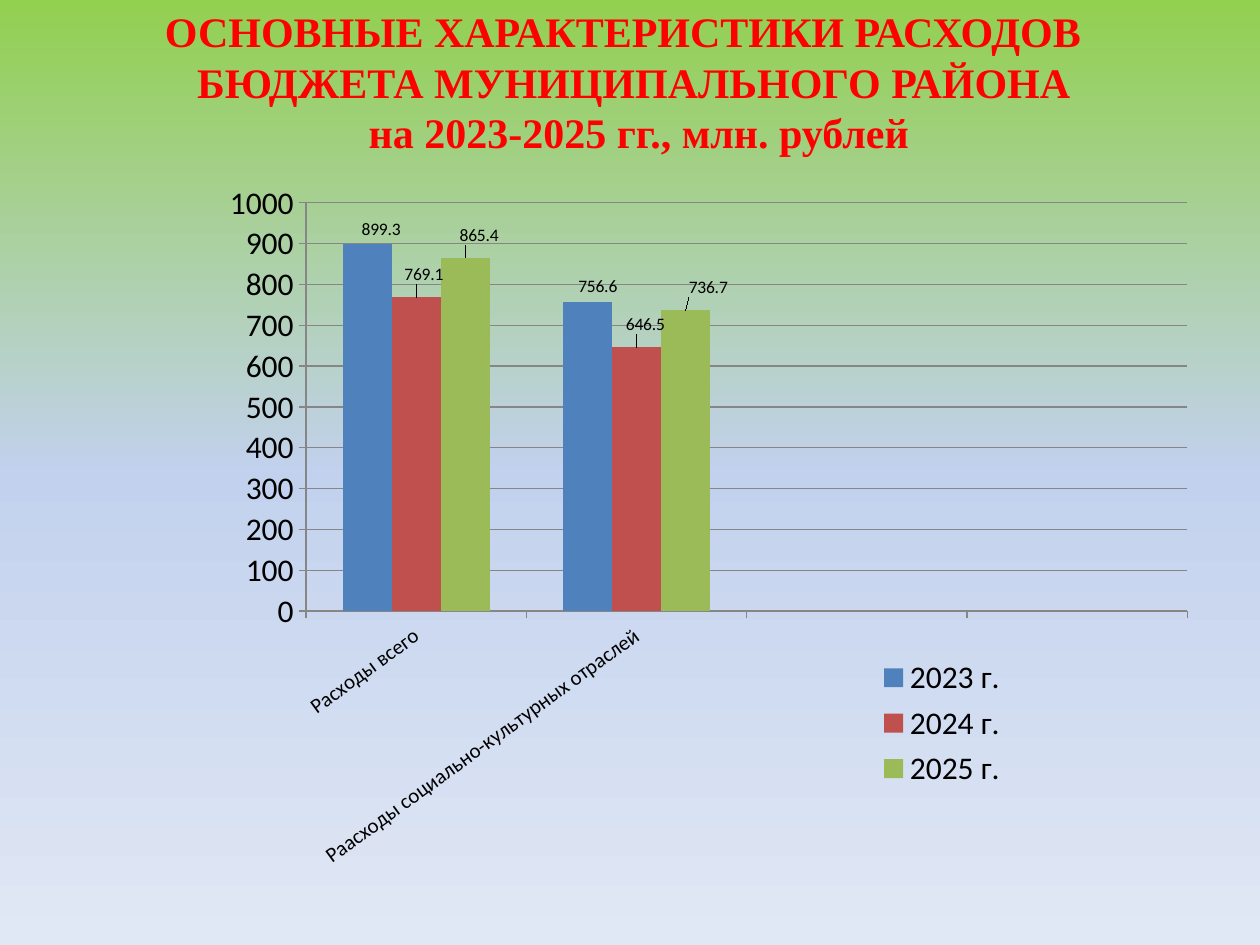
from copy import deepcopy
from dataclasses import dataclass

from lxml import etree
from pptx import Presentation
from pptx.chart.data import CategoryChartData
from pptx.dml.color import RGBColor
from pptx.enum.chart import (XL_CHART_TYPE, XL_LABEL_POSITION,
                             XL_LEGEND_POSITION, XL_TICK_MARK)
from pptx.enum.text import MSO_ANCHOR, PP_ALIGN
from pptx.oxml.ns import qn
from pptx.util import Inches, Pt

COLUMNS = XL_CHART_TYPE.COLUMN_CLUSTERED
LABEL_ABOVE = XL_LABEL_POSITION.OUTSIDE_END
LEGEND_RIGHT = XL_LEGEND_POSITION.RIGHT
TICK_OUT = XL_TICK_MARK.OUTSIDE
MIDDLE = MSO_ANCHOR.MIDDLE
CENTER = PP_ALIGN.CENTER


@dataclass(frozen=True)
class Theme:
    title_font: str = "Times New Roman"
    chart_font: str = "Calibri"
    title: str = "FF0000"
    text: str = "000000"
    line: str = "868686"
    background: tuple = ((0, "92D050"), (0.5, "C2D1ED"), (1, "E1E8F5"))
    title_size: int = 24
    chart_size: int = 18
    category_size: int = 12
    label_size: int = 10


THEME = Theme()

# Line, left indent, right indent in inches
TITLE = (("ОСНОВНЫЕ ХАРАКТЕРИСТИКИ РАСХОДОВ", 0, 0.17),
         ("БЮДЖЕТА МУНИЦИПАЛЬНОГО РАЙОНА", 0, 0),
         ("на 2023-2025 гг., млн. рублей", 0.08, 0))
# The last two categories are left empty
CATEGORIES = ("Расходы всего", "Раасходы социально-культурных отраслей", "", "")
# Name, colour, values, label shifts in inches
SERIES = (
    ("2023 г.", "4F81BD", (899.3, 756.6, None, None), ((0.11, 0), (0.08, -0.01))),
    ("2024 г.", "C0504D", (769.1, 646.5, None, None), ((0.06, -0.06), (0.07, -0.06))),
    ("2025 г.", "9BBB59", (865.4, 736.7, None, None), ((0.11, -0.06), (0.18, -0.06))),
)


def rgb(value):
    return RGBColor.from_string(value)


def manual_layout(size, lengths, **modes):
    """Return a c:layout with lengths in inches as fractions of the chart size."""
    layout = etree.Element(qn("c:layout"))
    manual = etree.SubElement(layout, qn("c:manualLayout"))
    for name, value in modes.items():
        etree.SubElement(manual, qn(f"c:{name}")).set("val", value)
    for name, length, whole in zip("xywh", lengths, size * 2):
        fraction = Inches(length) / whole
        etree.SubElement(manual, qn(f"c:{name}")).set("val", str(fraction))
    return layout


def set_layout(parent, after, layout):
    """Put the layout in parent, after the named child or first if None."""
    for old in parent.findall(qn("c:layout")):
        parent.remove(old)
    index = 0 if after is None else parent.index(parent.find(qn(after))) + 1
    parent.insert(index, layout)


def paint_background(slide):
    fill = slide.background.fill
    fill.gradient()
    fill.gradient_angle = 270
    stop_list = slide._element.xpath(".//a:gsLst")[0]
    stop_list.append(deepcopy(stop_list[0]))
    for stop, (position, color) in zip(fill.gradient_stops, THEME.background):
        stop.position = position
        stop.color.rgb = rgb(color)


def add_title(slide, box):
    tf = slide.shapes.add_textbox(*box).text_frame
    tf.word_wrap = True
    tf.vertical_anchor = MIDDLE
    for i, (line, left, right) in enumerate(TITLE):
        p = tf.add_paragraph() if i else tf.paragraphs[0]
        p.alignment = CENTER
        properties = p._p.get_or_add_pPr()
        properties.set("marL", str(Inches(left)))
        properties.set("marR", str(Inches(right)))
        r = p.add_run()
        r.text = line
        r.font.name = THEME.title_font
        r.font.size = Pt(THEME.title_size)
        r.font.bold = True
        r.font.color.rgb = rgb(THEME.title)


def style_axes(chart):
    for axis in (chart.category_axis, chart.value_axis):
        axis.major_tick_mark = TICK_OUT
        axis.format.line.color.rgb = rgb(THEME.line)
    chart.category_axis.tick_labels.font.size = Pt(THEME.category_size)
    body = chart.category_axis._element.find(qn("c:txPr")).find(qn("a:bodyPr"))
    body.set("rot", str(-36 * 60000))
    values = chart.value_axis
    values.minimum_scale, values.maximum_scale, values.major_unit = 0, 1000, 100
    values.has_major_gridlines = True
    values.major_gridlines.format.line.color.rgb = rgb(THEME.line)


def style_series(series, color, shifts, size):
    series.format.fill.solid()
    series.format.fill.fore_color.rgb = rgb(color)
    labels = series.data_labels
    labels.show_value = True
    labels.position = LABEL_ABOVE
    labels.font.size = Pt(THEME.label_size)
    for i, shift in enumerate(shifts):
        label = series.points[i].data_label
        label.font.size = Pt(THEME.label_size)
        label.position = LABEL_ABOVE
        element = series._element.xpath("./c:dLbls/c:dLbl")[i]
        set_layout(element, "c:idx", manual_layout(size, shift))


def drop_empty_categories(chart):
    """Keep the empty places on the axis but store no label for them."""
    for point in chart._chartSpace.xpath(".//c:cat//c:pt"):
        if not point.findtext(qn("c:v")):
            point.getparent().remove(point)


def add_spending_chart(slide, box):
    size = box[2:]
    data = CategoryChartData()
    data.categories = CATEGORIES
    for name, _, values, _ in SERIES:
        data.add_series(name, values)
    chart = slide.shapes.add_chart(COLUMNS, *box, data).chart
    drop_empty_categories(chart)
    chart.has_title = False
    chart.font.name = THEME.chart_font
    chart.font.size = Pt(THEME.chart_size)
    chart.font.color.rgb = rgb(THEME.text)

    plot = chart.plots[0]
    plot.gap_width = 150
    plot.overlap = 0
    plot.vary_by_categories = False
    for series, (_, color, _, shifts) in zip(plot.series, SERIES):
        style_series(series, color, shifts, size)
    style_axes(chart)

    chart.has_legend = True
    chart.legend.position = LEGEND_RIGHT
    chart.legend.include_in_layout = False
    set_layout(chart.legend._element, "c:legendPos", manual_layout(
        size, (5.33, 3.78, 1.1, 1.14), xMode="edge", yMode="edge"))
    plot_area = chart._chartSpace.xpath(".//c:plotArea")[0]
    set_layout(plot_area, None, manual_layout(
        size, (0.83, 0.22, 7, 3.24),
        layoutTarget="inner", xMode="edge", yMode="edge"))


def main():
    prs = Presentation()
    prs.slide_width, prs.slide_height = Inches(10), Inches(7.5)
    slide = prs.slides.add_slide(prs.slide_layouts[6])
    paint_background(slide)
    add_title(slide, (Inches(0.53), Inches(0.29), Inches(9), Inches(0.71)))
    add_spending_chart(
        slide, (Inches(1.6), Inches(1.39), Inches(7.83), Inches(5.59)))
    prs.save("out.pptx")


if __name__ == "__main__":
    main()
